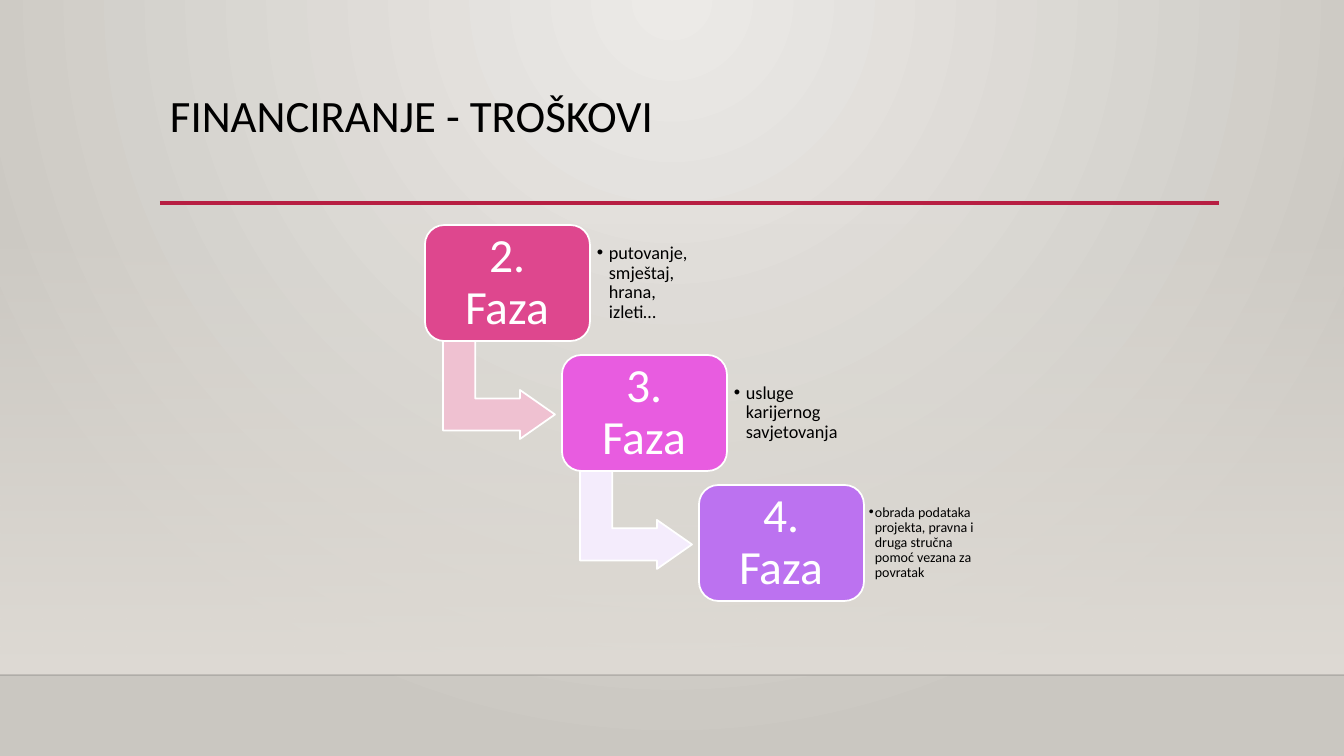
from lxml.etree import SubElement
from pptx import Presentation
from pptx.dml.color import RGBColor
from pptx.enum.shapes import MSO_CONNECTOR, MSO_SHAPE as SHAPE
from pptx.enum.text import MSO_ANCHOR as ANCHOR, PP_ALIGN as ALIGN
from pptx.oxml.ns import qn
from pptx.util import Emu, Pt

COLORS = {
    "bg_light": "ECEAE7", "bg_dark": "CAC7C1", "floor": "DFDBD5",
    "edge": "000001", "rule": "B71E42", "text": "000000", "white": "FFFFFF",
    "pink": "DE478E", "magenta": "E85CE0", "violet": "BC72F0",
    "pale_pink": "EFC1D1", "pale_violet": "F4ECFC",
}
PHASES = [
    ("2. Faza", "pink", "pale_pink", "putovanje, smještaj, hrana, izleti…", 13, 7, 12),
    ("3. Faza", "magenta", "pale_violet", "usluge karijernog savjetovanja", 13, 7, 12),
    ("4. Faza", "violet", None,
     "obrada podataka projekta, pravna i druga stručna pomoć vezana za povratak", 10, 5, 6),
]
LEFT, TOP, STEP_X, STEP_Y = 425, 225, 137, 130
BOX_W, BOX_H = 165, 116


def px(n):
    return Emu(round(n * 914400 / 100.8))


def rgb(name):
    return RGBColor.from_string(COLORS[name])


def set_alpha(color_parent, percent):
    SubElement(color_parent.find(".//" + qn("a:srgbClr")), qn("a:alpha"), val=str(percent * 1000))


def write(tf, text, size, color="text", align=ALIGN.LEFT, anchor=ANCHOR.MIDDLE,
          insets=(10, 5), indent=0):
    tf.word_wrap = True
    tf.vertical_anchor = anchor
    tf.margin_left = tf.margin_right = px(insets[0])
    tf.margin_top = tf.margin_bottom = px(insets[1])
    p = tf.paragraphs[0]
    p.alignment, p.line_spacing = align, 0.9
    if indent:
        pPr = p._p.get_or_add_pPr()
        pPr.set("marL", str(px(indent)))
        pPr.set("indent", str(-px(indent)))
        SubElement(pPr, qn("a:buFont"), typeface="Arial")
        SubElement(pPr, qn("a:buChar"), char="•")
    r = p.add_run()
    r.text = text
    r.font.name, r.font.size, r.font.color.rgb = "Calibri", Pt(size), rgb(color)


class Deck:
    """Holds the presentation, its current slide and the drawing style."""

    def __init__(self, width, height):
        self.prs = Presentation()
        self.prs.slide_width, self.prs.slide_height = px(width), px(height)
        self.s = self.prs.slides.add_slide(self.prs.slide_layouts[6])

    def gradient(self, fill, *colors):
        fill.gradient()
        for stop, color in zip(fill.gradient_stops, colors):
            stop.color.rgb = rgb(color)

    def background(self, inner, outer):
        self.gradient(self.s.background.fill, inner, outer)
        grad = self.s.element.find(".//" + qn("a:gradFill"))
        grad.remove(grad.find(qn("a:lin")))
        circle = SubElement(grad, qn("a:path"), path="circle")
        SubElement(circle, qn("a:fillToRect"), l="43000", t="0", r="43000", b="100000")

    def shape(self, kind, x, y, w, h, fill=None, adjust=(), rotation=0):
        sp = self.s.shapes.add_shape(kind, px(x), px(y), px(w), px(h))
        sp.shadow.inherit = False
        sp.rotation = rotation
        for i, value in enumerate(adjust):
            sp.adjustments[i] = value
        if fill:
            sp.fill.solid()
            sp.fill.fore_color.rgb = rgb(fill)
            sp.line.color.rgb, sp.line.width = rgb("white"), Pt(1.25)
        else:
            sp.line.fill.background()
        return sp

    def fade(self, x, y, w, h, color):
        sp = self.shape(SHAPE.RECTANGLE, x, y, w, h)
        self.gradient(sp.fill, color, color)
        sp.fill.gradient_angle = 270
        set_alpha(sp.element.spPr, 0)

    def line(self, x1, x2, y, color, width, alpha=None):
        c = self.s.shapes.add_connector(MSO_CONNECTOR.STRAIGHT, px(x1), px(y), px(x2), px(y))
        c.line.color.rgb, c.line.width = rgb(color), Pt(width)
        if alpha is not None:
            set_alpha(c.element.spPr, alpha)
        SubElement(c.element.spPr, qn("a:effectLst"))

    def text(self, x, y, w, h, text, size, **style):
        box = self.s.shapes.add_textbox(px(x), px(y), px(w), px(h))
        write(box.text_frame, text, size, **style)

    def phase(self, x, y, title, fill, arrow_fill, note, size, inset, indent):
        if arrow_fill:
            self.shape(SHAPE.BENT_UP_ARROW, x + 25, y + 109, 98, 112, arrow_fill,
                       (0.328, 0.25, 0.358), 90)
        box = self.shape(SHAPE.ROUNDED_RECTANGLE, x, y, BOX_W, BOX_H, fill, (0.167,))
        write(box.text_frame, title, 34, "white", ALIGN.CENTER, insets=(14, 14))
        self.text(x + BOX_W, y + 11, 120, 94, note, size, insets=(inset, inset), indent=indent)


def main():
    deck = Deck(1344, 756)
    deck.background("bg_light", "bg_dark")
    deck.fade(0, 223, 1344, 452, "floor")
    deck.line(0, 1344, 675, "edge", 1, alpha=20)
    deck.line(160, 1219, 203, "rule", 2.5)
    deck.text(160, 89, 1058, 116, "FINANCIRANJE - TROŠKOVI", 32, anchor=ANCHOR.TOP)
    for i, phase in enumerate(PHASES):
        deck.phase(LEFT + i * STEP_X, TOP + i * STEP_Y, *phase)
    deck.prs.save("out.pptx")


if __name__ == "__main__":
    main()
